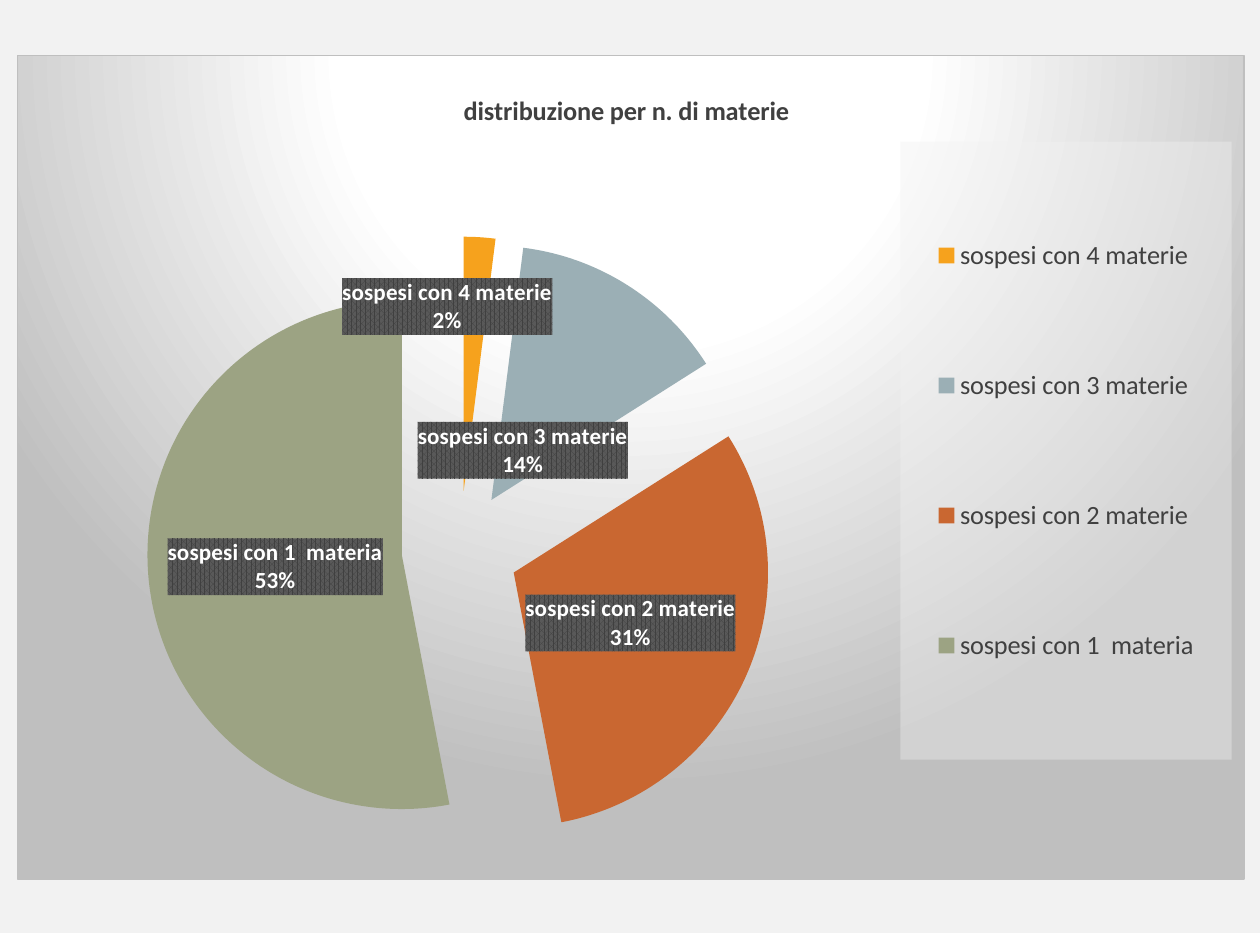
from copy import deepcopy
from dataclasses import dataclass
from typing import Optional

from pptx import Presentation
from pptx.chart.data import CategoryChartData as Data
from pptx.dml.color import RGBColor as RGB
from pptx.enum.chart import XL_CHART_TYPE as Kind
from pptx.enum.chart import XL_LABEL_POSITION as Spot
from pptx.enum.chart import XL_LEGEND_POSITION as Side
from pptx.oxml import parse_xml
from pptx.util import Inches, Pt

WIDE, HIGH = Inches(10.63), Inches(7.87)
FONT = "Calibri"
DARK, WHITE, GREY, PALE = "404040", "FFFFFF", "BFBFBF", "F2F2F2"
NS = (
    'xmlns:c="http://schemas.openxmlformats.org/drawingml/2006/chart" '
    'xmlns:a="http://schemas.openxmlformats.org/drawingml/2006/main"'
)


@dataclass
class Slice:
    name: str
    value: int
    color: str
    shift: Optional[tuple[float, float]] = None  # label move, shares of the chart


SLICES = [
    Slice("sospesi con 4 materie", 2, "F6A21D", (-0.02, -0.07)),
    Slice("sospesi con 3 materie", 14, "9BAFB5", (-0.03, 0.07)),
    Slice("sospesi con 2 materie", 31, "C96731"),
    Slice("sospesi con 1  materia", 53, "9CA383"),
]


def rgb(color: str) -> RGB:
    return RGB.from_string(color)


def style(font, size: float, color: str, bold: bool = False) -> None:
    font.name, font.size, font.bold = FONT, Pt(size), bold
    font.color.rgb = rgb(color)


def write(frame, text: str, **form) -> None:
    frame.text = text
    style(frame.paragraphs[0].runs[0].font, **form)


def ink(color: str, extra: str = "") -> str:
    return f'<a:srgbClr val="{color}">{extra}</a:srgbClr>'


def props(body: str):
    return parse_xml(f"<c:spPr {NS}>{body}</c:spPr>")


def layout(x: float, y: float, size: str = "", mode: str = "edge"):
    modes = f'<c:xMode val="{mode}"/><c:yMode val="{mode}"/>' if mode else ""
    return parse_xml(
        f"<c:layout {NS}><c:manualLayout>{modes}"
        f'<c:x val="{x}"/><c:y val="{y}"/>{size}</c:manualLayout></c:layout>'
    )


def extent(w: float, h: float) -> str:
    return f'<c:w val="{w}"/><c:h val="{h}"/>'


def place(part, index: int, new) -> None:
    for old in part.xpath("c:layout"):
        part.remove(old)
    part.insert(index, new)


def move(labels, index: int, shift: tuple[float, float]) -> None:
    """Shift the label of one slice away from its usual place."""
    label = parse_xml(f'<c:dLbl {NS}><c:idx val="{index}"/></c:dLbl>')
    label.append(layout(*shift, mode=""))
    for child in labels.xpath("*[not(self::c:dLbl or self::c:showLeaderLines)]"):
        label.append(deepcopy(child))
    labels.insert(index, label)


# Slide
deck = Presentation()
deck.slide_width, deck.slide_height = WIDE, HIGH
slide = deck.slides.add_slide(deck.slide_layouts[6])
slide.background.fill.solid()
slide.background.fill.fore_color.rgb = rgb(PALE)

# Chart
data = Data()
data.categories = [s.name for s in SLICES]
data.add_series("Series 1", [s.value for s in SLICES])
chart = slide.shapes.add_chart(
    Kind.PIE, Inches(0.14), Inches(0.46), Inches(10.36), Inches(6.96), data
).chart
style(chart.font, 14, "000000")
root = chart.element
root.xpath("c:chart")[0].addnext(props(
    f'<a:gradFill><a:gsLst><a:gs pos="0">{ink(WHITE)}</a:gs>'
    f'<a:gs pos="39000">{ink(WHITE)}</a:gs><a:gs pos="100000">{ink(GREY)}</a:gs>'
    '</a:gsLst><a:path path="circle"><a:fillToRect l="50000" t="-80000" r="50000" '
    'b="180000"/></a:path></a:gradFill>'
    f'<a:ln w="9525"><a:solidFill>{ink(GREY)}</a:solidFill></a:ln>'
))

# Title
chart.has_title = True
write(chart.chart_title.text_frame, "distribuzione per n. di materie",
      size=16, color=DARK, bold=True)
place(root.xpath("c:chart/c:title")[0], 1, layout(0.36, 0.04))

# Legend
chart.has_legend = True
chart.legend.position = Side.RIGHT
chart.legend.include_in_layout = False
style(chart.legend.font, 16, DARK)
key = root.xpath("c:chart/c:legend")[0]
place(key, 1, layout(0.72, 0.105, extent(0.27, 0.75)))
key.xpath("c:txPr")[0].addprevious(props(
    f'<a:solidFill>{ink(PALE, """<a:alpha val="39000"/>""")}</a:solidFill>'
))

# Slices
area = root.xpath("c:chart/c:plotArea")[0]
inner = layout(0.106, 0.22, extent(0.51, 0.76))
inner[0].insert(0, parse_xml(f'<c:layoutTarget {NS} val="inner"/>'))
place(area, 0, inner)
plot = chart.plots[0]
plot.vary_by_categories = True
pie = plot.series[0]
pie.format.line.fill.background()
for i, part in enumerate(SLICES):
    form = pie.points[i].format
    form.fill.solid()
    form.fill.fore_color.rgb = rgb(part.color)
    form.line.fill.background()
area.xpath("c:pieChart/c:ser/c:spPr")[0].addnext(
    parse_xml(f'<c:explosion {NS} val="23"/>')
)

# Labels
tags = pie.data_labels
tags.show_percentage = tags.show_category_name = True
tags.show_value = False
tags.number_format, tags.number_format_is_linked = "0%", False
tags.position = Spot.CENTER
style(tags.font, 14, WHITE, bold=True)
labels = area.xpath("c:pieChart/c:ser/c:dLbls")[0]
labels.xpath("c:txPr")[0].addprevious(props(
    f'<a:pattFill prst="pct75"><a:fgClr>{ink(DARK)}</a:fgClr>'
    f'<a:bgClr>{ink("595959")}</a:bgClr></a:pattFill>'
))
labels.xpath("c:showBubbleSize|c:showPercent")[-1].addnext(
    parse_xml(f"<c:separator {NS}>\n</c:separator>")
)
for i, part in enumerate(SLICES):
    if part.shift:
        move(labels, i, part.shift)

deck.save("out.pptx")
